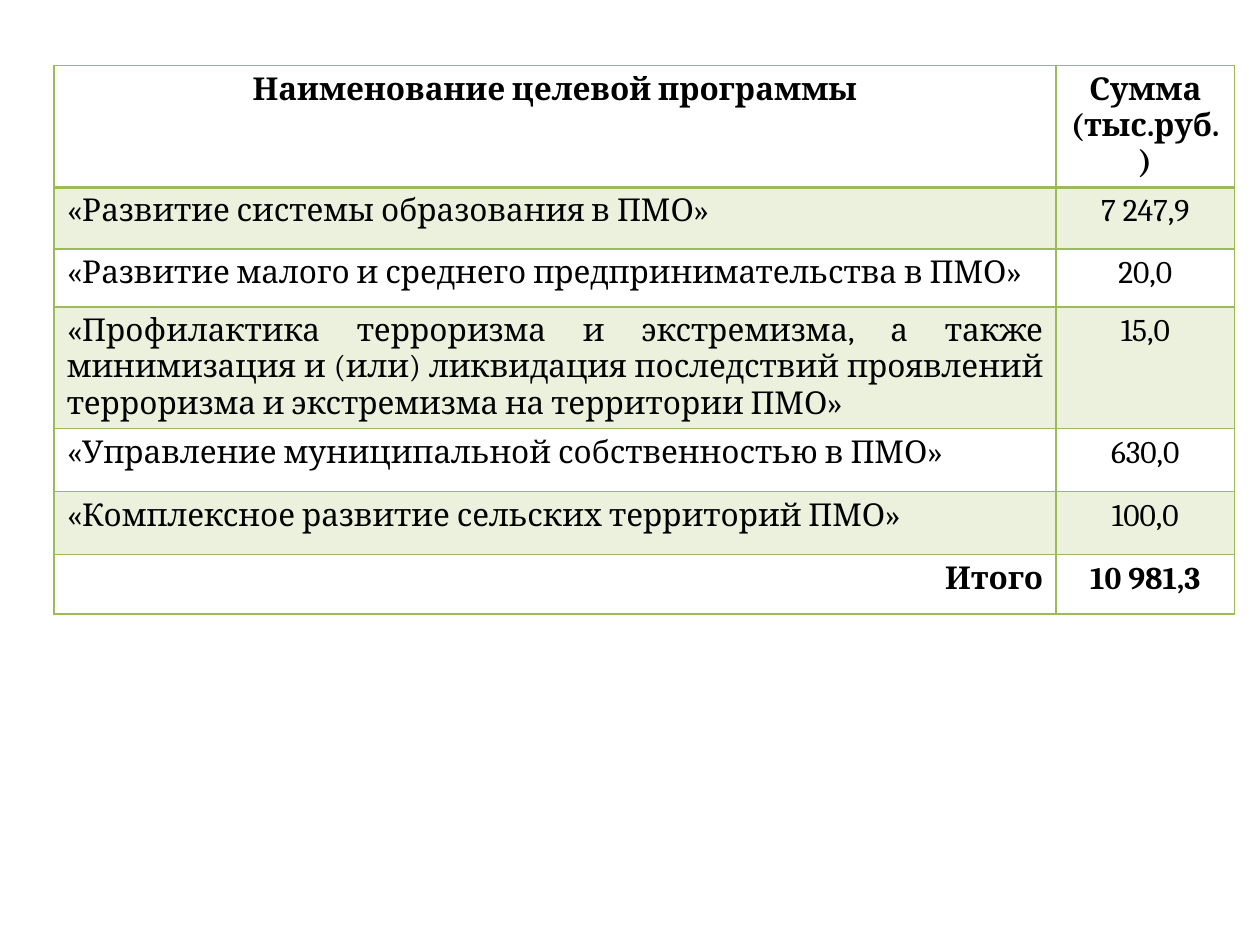
"""Build a slide with a table of target programmes and their sums."""
import dataclasses

import lxml.etree
import pptx
import pptx.dml.color
import pptx.enum.text
import pptx.oxml.ns
import pptx.table
import pptx.util

Align = pptx.enum.text.PP_ALIGN
COLORS = {"text": "000000", "green": "9BBB59"}
BAND_OPACITY = 20
COLUMN_WIDTHS = (7.95, 1.42)


@dataclasses.dataclass(frozen=True)
class ProgramRow:
    """One table row and its look."""

    name: str
    amount: str
    height: float
    name_align: Align = Align.JUSTIFY
    bold: bool = False
    banded: bool = False


ROWS = (
    ProgramRow("Наименование целевой программы", "Сумма (тыс.руб.)", 0.63, Align.CENTER, bold=True),
    ProgramRow("«Развитие системы образования в ПМО»", "7 247,9", 0.49, banded=True),
    ProgramRow("«Развитие малого и среднего предпринимательства в ПМО»", "20,0", 0.46),
    ProgramRow(
        "«Профилактика терроризма и экстремизма, а также минимизация и (или) ликвидация "
        "последствий проявлений терроризма и экстремизма на территории ПМО»",
        "15,0", 0.49, banded=True,
    ),
    ProgramRow("«Управление муниципальной собственностью в ПМО»", "630,0", 0.5),
    ProgramRow("«Комплексное развитие сельских территорий ПМО»", "100,0", 0.5, banded=True),
    ProgramRow("Итого", "10 981,3", 0.47, Align.RIGHT, bold=True),
)


def add_xml(parent: lxml.etree._Element, tag: str, **attributes: str) -> lxml.etree._Element:
    """Append a DrawingML element to its parent."""
    return lxml.etree.SubElement(parent, pptx.oxml.ns.qn(f"a:{tag}"), attributes)


def write_text(cell: pptx.table._Cell, text: str, align: Align, bold: bool) -> None:
    """Write one formatted paragraph into a cell."""
    para = cell.text_frame.paragraphs[0]
    para.alignment = align
    span = para.add_run()
    span.text = text
    formats = {"name": "Cambria", "size": pptx.util.Pt(18), "bold": bold}
    for attribute, value in formats.items():
        setattr(span.font, attribute, value)
    span.font.color.rgb = pptx.dml.color.RGBColor.from_string(COLORS["text"])


def fill_cell(cell: pptx.table._Cell, banded: bool) -> None:
    """Give a banded cell a translucent fill and clear any other."""
    if not banded:
        cell.fill.background()
        return
    cell.fill.solid()
    cell.fill.fore_color.rgb = pptx.dml.color.RGBColor.from_string(COLORS["green"])
    color = cell._tc.tcPr.find(".//" + pptx.oxml.ns.qn("a:srgbClr"))
    add_xml(color, "alpha", val=str(BAND_OPACITY * 1000))


def draw_borders(cell: pptx.table._Cell, top: float, bottom: float) -> None:
    """Draw the four borders of a cell with widths in points."""
    properties = cell._tc.get_or_add_tcPr()
    widths = {"lnL": 1, "lnR": 1, "lnT": top, "lnB": bottom}
    for position, (tag, width) in enumerate(widths.items()):
        line = add_xml(properties, tag, w=str(pptx.util.Pt(width)))
        add_xml(add_xml(line, "solidFill"), "srgbClr", val=COLORS["green"])
        properties.insert(position, line)


def main() -> None:
    """Create and save the deck."""
    deck = pptx.Presentation()
    deck.slide_width = pptx.util.Inches(10)
    deck.slide_height = pptx.util.Inches(7.5)
    page = deck.slides.add_slide(deck.slide_layouts[6])
    size = (sum(COLUMN_WIDTHS), sum(row.height for row in ROWS))
    frame = page.shapes.add_table(
        len(ROWS), len(COLUMN_WIDTHS), *map(pptx.util.Inches, (0.43, 0.52, *size))
    )
    table = frame.table
    table.first_row = table.horz_banding = False
    for column, width in zip(table.columns, COLUMN_WIDTHS):
        column.width = pptx.util.Inches(width)
    for index, row in enumerate(ROWS):
        table.rows[index].height = pptx.util.Inches(row.height)
        contents = ((row.name, row.name_align), (row.amount, Align.CENTER))
        for cell, (text, align) in zip(table.rows[index].cells, contents):
            write_text(cell, text, align, row.bold)
            fill_cell(cell, row.banded)
            draw_borders(cell, top=2 if index == 1 else 1, bottom=2 if index == 0 else 1)
    deck.save("out.pptx")


if __name__ == "__main__":
    main()
